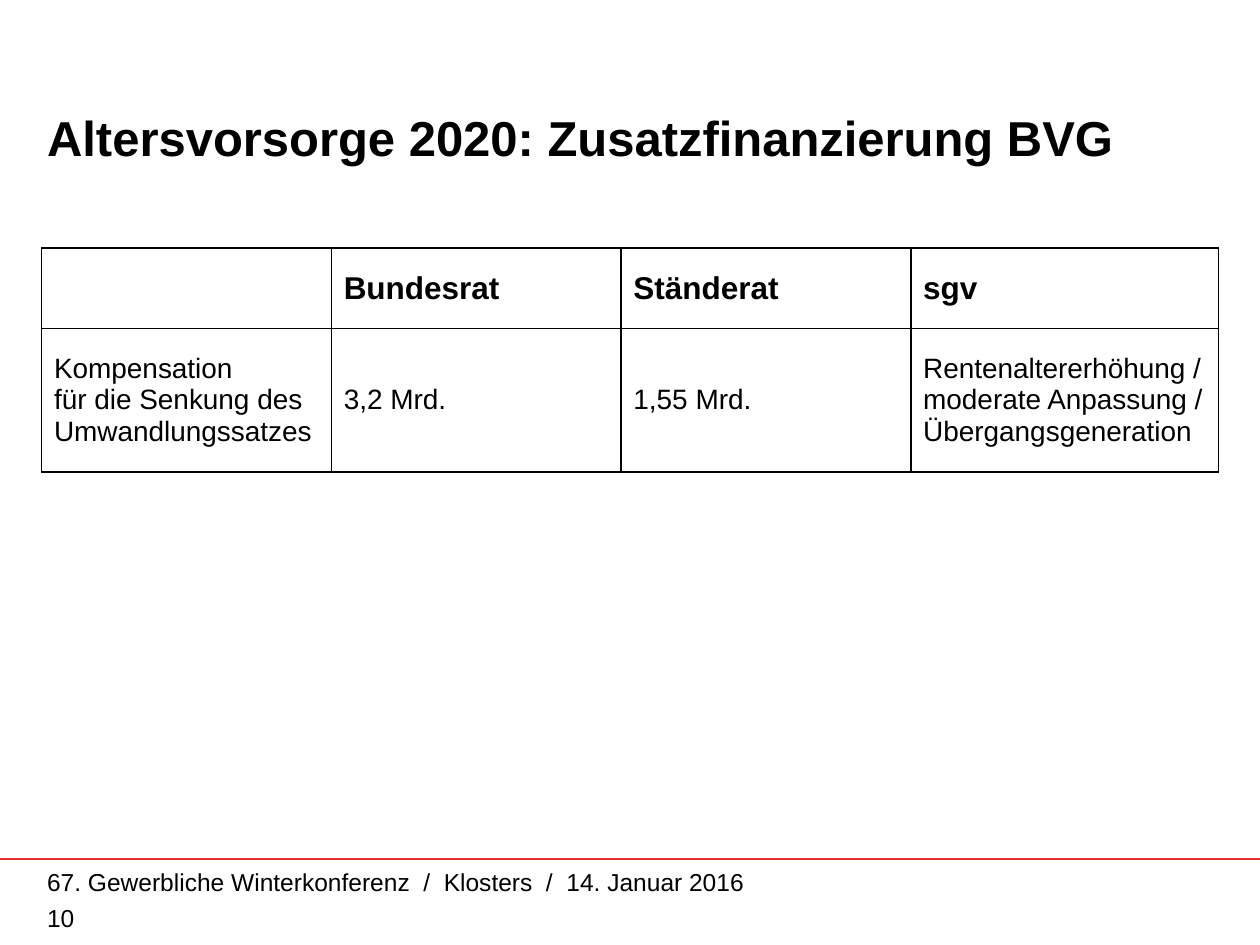
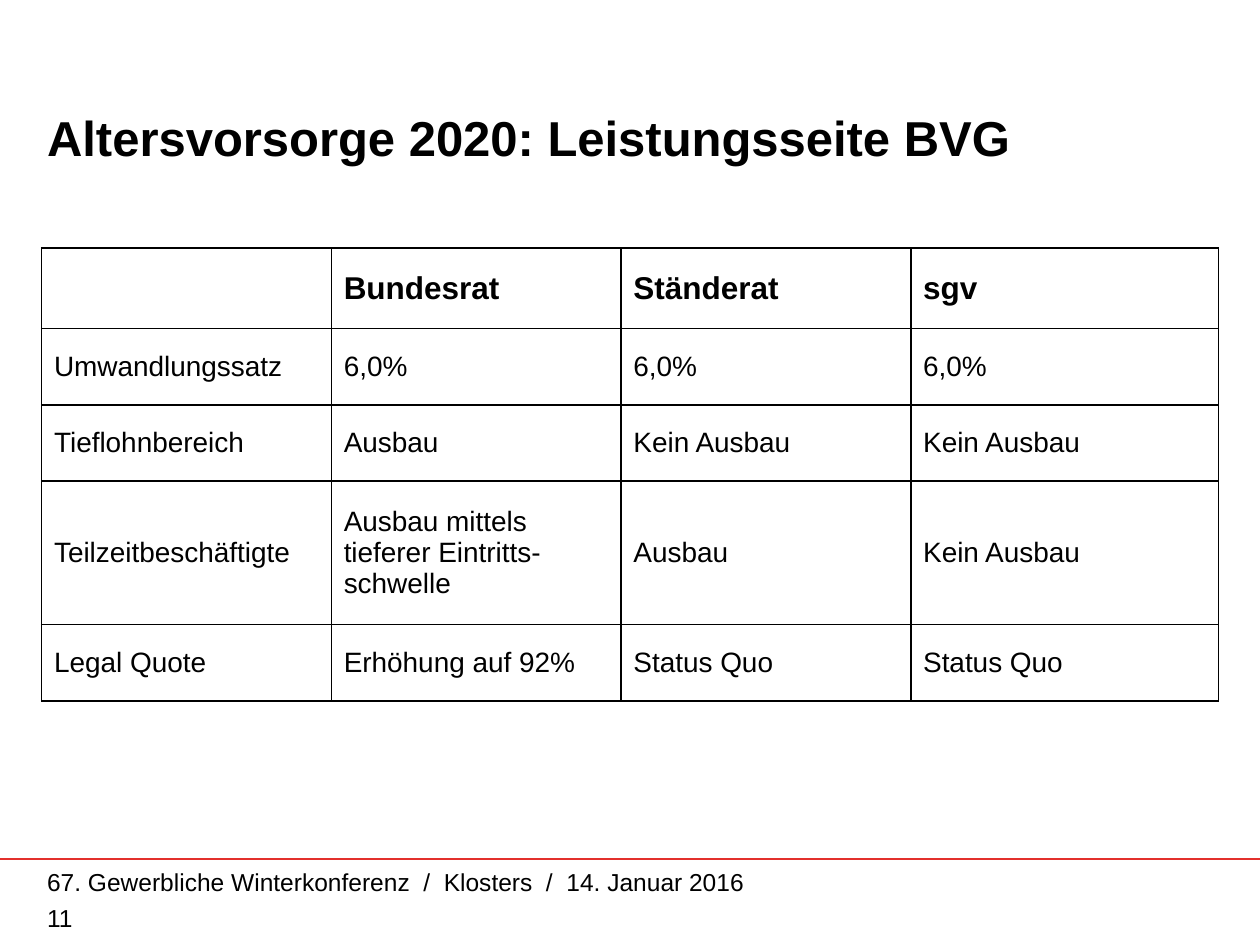
from dataclasses import dataclass
from lxml import etree
from pptx import Presentation
from pptx import util as u
from pptx.dml.color import RGBColor
from pptx.enum import shapes, text
from pptx.oxml import ns


@dataclass(frozen=True)
class Theme:
    """Colours, font and type sizes of the deck."""
    ink: str = "000000"
    rule: str = "E3302C"
    font: str = "Arial"
    title: int = 28
    head: int = 18
    body: int = 16
    foot: int = 14


LOOK = Theme()
WIDE, HIGH = 25.4, 19.05
COLS = (5.84, 5.84, 5.84, 6.2)
HEADS = ("", "Bundesrat", "Ständerat", "sgv")
EVENT = "67. Gewerbliche Winterkonferenz  /  Klosters  /  14. Januar 2016"

FUND = (
    ("Kompensation\nfür die Senkung des Umwandlungssatzes", "3,2 Mrd.", "1,55 Mrd.",
     "Rentenaltererhöhung /\vmoderate Anpassung / Übergangsgeneration"),
)
GAIN = (
    ("Umwandlungssatz", "6,0%", "6,0%", "6,0%"),
    ("Tieflohnbereich", "Ausbau", "Kein Ausbau", "Kein Ausbau"),
    ("Teilzeitbeschäftigte", "Ausbau mittels \vtieferer Eintritts-schwelle",
     "Ausbau", "Kein Ausbau"),
    ("Legal Quote", "Erhöhung auf 92%", "Status Quo", "Status Quo"),
)
PAGES = (
    (10, "Altersvorsorge 2020: Zusatzfinanzierung BVG", FUND, (1.55, 2.72)),
    (11, "Altersvorsorge 2020: Leistungsseite BVG", GAIN, (1.59, 1.52, 1.52, 2.87, 1.52)),
)


def write(frame, words, size=LOOK.body, bold=False, mid=True):
    """Fill a text frame with words in one format."""
    frame.word_wrap = True
    frame.vertical_anchor = text.MSO_ANCHOR.MIDDLE if mid else text.MSO_ANCHOR.TOP
    frame.text = words
    for para in frame.paragraphs:
        for run in para.runs:
            font = run.font
            font.name, font.size, font.bold = LOOK.font, u.Pt(size), bold
            font.color.rgb = RGBColor.from_string(LOOK.ink)


def label(slide, box, words, **form):
    """Add a text box at box (left, top, width, height)."""
    shape = slide.shapes.add_textbox(*map(u.Cm, box))
    write(shape.text_frame, words, **form)


def footer(slide, box, page):
    """Draw the red rule, the event line and the page number."""
    left, top, width, height = box
    line = slide.shapes.add_connector(
        shapes.MSO_CONNECTOR.STRAIGHT, u.Cm(left), u.Cm(top), u.Cm(left + width), u.Cm(top))
    line.line.color.rgb = RGBColor.from_string(LOOK.rule)
    line.line.width = u.Pt(1.5)
    etree.SubElement(line._element.spPr, ns.qn("a:effectLst"))
    label(slide, (left + 0.7, top - 0.05, width - 0.7, 1), EVENT, size=LOOK.foot)
    label(slide, (left + 0.7, top + 0.76, 2, 0.84), str(page), size=LOOK.foot, mid=False)


def edge(cell):
    """Draw a thin line on all four sides of a cell."""
    props = cell._tc.get_or_add_tcPr()
    for spot, side in enumerate("LRTB"):
        line = etree.Element(ns.qn("a:ln" + side), w=str(u.Pt(1)))
        fill = etree.SubElement(line, ns.qn("a:solidFill"))
        etree.SubElement(fill, ns.qn("a:srgbClr"), val=LOOK.ink)
        props.insert(spot, line)


def grid(slide, left, top, rows, highs):
    """Build the comparison table with its heading row."""
    rows = (HEADS, *rows)
    box = map(u.Cm, (left, top, sum(COLS), sum(highs)))
    table = slide.shapes.add_table(len(rows), len(COLS), *box).table
    table.first_row = table.horz_banding = False
    for col, width in zip(table.columns, COLS):
        col.width = u.Cm(width)
    for r, (row, high) in enumerate(zip(rows, highs)):
        table.rows[r].height = u.Cm(high)
        for c, words in enumerate(row):
            cell = table.cell(r, c)
            cell.fill.background()
            edge(cell)
            cell.margin_left = cell.margin_right = u.Cm(0.25)
            cell.margin_top = cell.margin_bottom = u.Cm(0.43)
            cell.vertical_anchor = text.MSO_ANCHOR.MIDDLE
            write(cell.text_frame, words, size=LOOK.body if r else LOOK.head, bold=r == 0)


def main():
    """Build and save the deck."""
    deck = Presentation()
    deck.slide_width, deck.slide_height = u.Cm(WIDE), u.Cm(HIGH)
    for page, title, rows, highs in PAGES:
        slide = deck.slides.add_slide(deck.slide_layouts[6])
        footer(slide, (0, 17.32, WIDE, 1.73), page)
        label(slide, (0.7, 1.98, 24, 1.55), title, size=LOOK.title, bold=True)
        grid(slide, 0.84, 5, rows, highs)
    deck.save("out.pptx")


if __name__ == "__main__":
    main()
